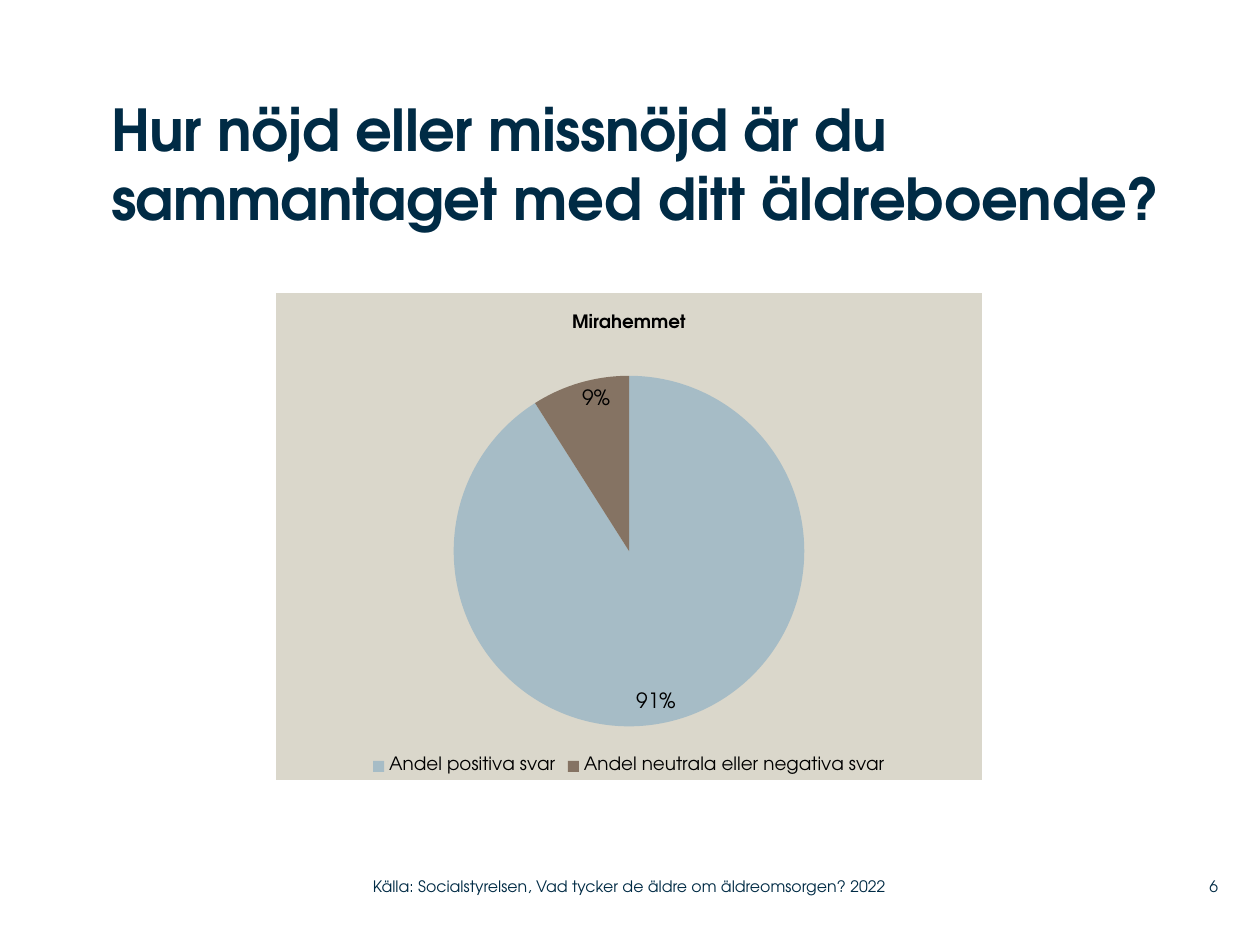
from pptx import Presentation
from pptx.chart.data import CategoryChartData as Data
from pptx.dml.color import RGBColor
from pptx.enum.chart import XL_CHART_TYPE as Kind, XL_LABEL_POSITION as Spot, XL_LEGEND_POSITION as Side
from pptx.enum.text import MSO_ANCHOR as Anchor, PP_ALIGN as Align
from pptx.oxml import parse_xml
from pptx.oxml.ns import nsdecls
from pptx.util import Emu, Pt

FACE = "TeX Gyre Adventor"
NAVY, BLACK, SAND = "002B45", "000000", "DAD7CB"
SCALE = 914400 / 126


def px(num):
    return Emu(round(num * SCALE))


def paint(text):
    return RGBColor.from_string(text)


def style(font, size, color, bold=False):
    form = {"name": FACE, "size": Pt(size), "bold": bold}
    for key, val in form.items():
        setattr(font, key, val)
    font.color.rgb = paint(color)


def add_text(slide, box, runs, size, bold=False, anchor=Anchor.MIDDLE, align=Align.LEFT):
    frame = slide.shapes.add_textbox(*map(px, box)).text_frame
    form = {"word_wrap": True, "vertical_anchor": anchor, "margin_left": 0,
            "margin_right": 0, "margin_top": 0, "margin_bottom": 0}
    for key, val in form.items():
        setattr(frame, key, val)
    para = frame.paragraphs[0]
    para.alignment = align
    for text, gap in runs:
        run = para.add_run()
        run.text = text
        style(run.font, size, NAVY, bold)
        if gap:
            run.font._element.set("spc", str(gap))


def fill_back(chart, color):
    props = parse_xml(
        f'<c:spPr {nsdecls("c", "a")}><a:solidFill><a:srgbClr val="{color}"/></a:solidFill>'
        '<a:ln><a:noFill/></a:ln></c:spPr>')
    chart._chartSpace.chart.addnext(props)


def place_plot(chart, left, top, width, height):
    area = chart._chartSpace.chart.plotArea
    for old in area.findall("{*}layout"):
        area.remove(old)
    area.insert(0, parse_xml(
        f'<c:layout {nsdecls("c")}><c:manualLayout><c:layoutTarget val="inner"/>'
        '<c:xMode val="edge"/><c:yMode val="edge"/>'
        f'<c:x val="{left}"/><c:y val="{top}"/><c:w val="{width}"/><c:h val="{height}"/>'
        '</c:manualLayout></c:layout>'))


def add_pie(slide, box, title, parts):
    data = Data()
    data.categories = [name for name, _, _ in parts]
    data.add_series("Series 1", [val for _, val, _ in parts])
    chart = slide.shapes.add_chart(Kind.PIE, *map(px, box), data).chart
    style(chart.font, 18, BLACK)
    fill_back(chart, SAND)
    place_plot(chart, 0.25, 0.17, 0.5, 0.72)

    chart.has_title = True
    para = chart.chart_title.text_frame.paragraphs[0]
    run = para.add_run()
    run.text = title
    style(run.font, 10.5, BLACK, True)

    chart.has_legend = True
    chart.legend.position = Side.BOTTOM
    chart.legend.include_in_layout = False
    style(chart.legend.font, 10.5, BLACK)

    plot = chart.plots[0]
    plot.vary_by_categories = True
    for pos, (_, _, color) in enumerate(parts):
        fill = plot.series[0].points[pos].format.fill
        fill.solid()
        fill.fore_color.rgb = paint(color)
    labels = plot.series[0].data_labels
    form = {"show_percentage": True, "show_value": False, "number_format": "0%",
            "number_format_is_linked": False, "position": Spot.INSIDE_END}
    for key, val in form.items():
        setattr(labels, key, val)
    style(labels.font, 12, BLACK)


def main():
    deck = Presentation()
    deck.slide_width, deck.slide_height = px(1260), px(945)
    slide = deck.slides.add_slide(deck.slide_layouts[6])
    add_text(slide, (111, 94, 1113, 179),
             [("Hur nöjd eller missnöjd är du sammantaget ", -30), ("med ditt äldreboende?", 0)],
             33, True, Anchor.TOP)
    add_pie(slide, (276, 293, 706, 487), "Mirahemmet",
            [("Andel positiva svar", 91, "A6BCC6"),
             ("Andel neutrala eller negativa svar", 9, "857363")])
    add_text(slide, (373, 868, 558, 37),
             [("Källa: Socialstyrelsen, Vad tycker de äldre om äldreomsorgen? 2022", 0)], 9)
    add_text(slide, (1159, 868, 59, 37), [("6", 0)], 9, align=Align.RIGHT)
    deck.save("out.pptx")


if __name__ == "__main__":
    main()
